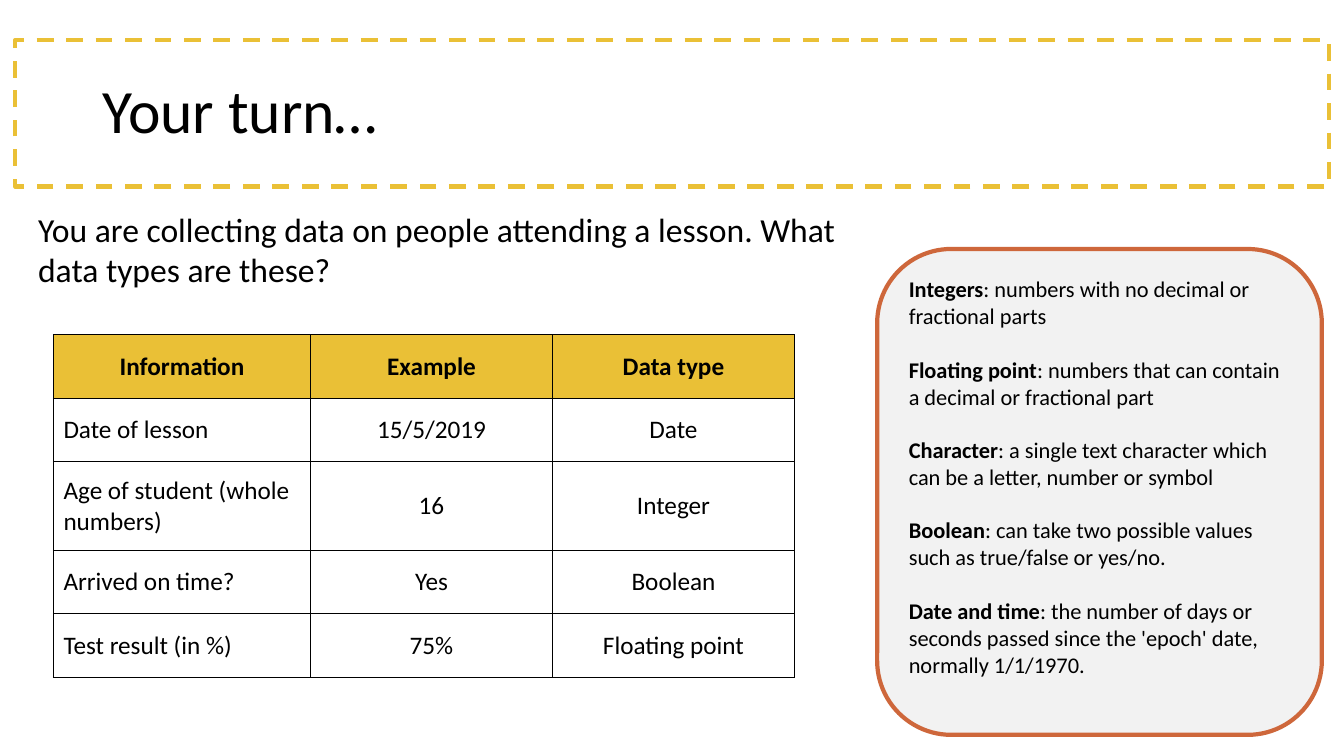
from pptx import Presentation
from pptx.dml.color import RGBColor
from pptx.enum.dml import MSO_LINE
from pptx.enum.shapes import MSO_SHAPE as Preset
from pptx.enum.text import MSO_ANCHOR as Anchor, PP_ALIGN as Align
from pptx.oxml import parse_xml
from pptx.oxml.ns import nsdecls
from pptx.util import Inches, Pt

TITLE = "Your turn…"
QUESTION = "You are collecting data on people attending a lesson. What data types are these?"
DEFINITIONS = [
    ("Integers", "numbers with no decimal or fractional parts"),
    ("Floating point", "numbers that can contain a decimal or fractional part"),
    ("Character", "a single text character which can be a letter, number or symbol"),
    ("Boolean", "can take two possible values such as true/false or yes/no."),
    ("Date and time", "the number of days or seconds passed since the 'epoch' date, normally 1/1/1970."),
]
ROWS = [
    ("Information", "Example", "Data type"),
    ("Date of lesson", "15/5/2019", "Date"),
    ("Age of student (whole numbers)", "16", "Integer"),
    ("Arrived on time?", "Yes", "Boolean"),
    ("Test result (in %)", "75%", "Floating point"),
]
COLUMN_WIDTHS = [2.55, 2.4, 2.4]
ROW_HEIGHTS = [0.63, 0.63, 0.88, 0.63, 0.63]

BOXES = {
    "banner": (0.15, 0.4, 13.03, 1.45),
    "title": (0.92, 0.4, 11.5, 1.45),
    "panel": (8.7, 2.47, 4.41, 4.82),
    "question": (0.28, 2.02, 8.43, 0.91),
    "table": (0.53, 3.32, sum(COLUMN_WIDTHS), sum(ROW_HEIGHTS)),
}
THEME = {
    "font": "Calibri",
    "text": "000000",
    "yellow": "EAC036",
    "orange": "CE673B",
    "panel": "F2F2F2",
    "title_size": 44,
    "question_size": 24,
    "table_size": 18,
    "panel_size": 16,
}


def color(name):
    return RGBColor.from_string(THEME[name])


def box(name):
    return [Inches(length) for length in BOXES[name]]


def add_run(paragraph, text, size, bold=False):
    run = paragraph.add_run()
    run.text = text
    values = {"name": THEME["font"], "size": Pt(THEME[size]), "bold": bold}
    for attribute, value in values.items():
        setattr(run.font, attribute, value)
    run.font.color.rgb = color("text")


def add_outlined(slide, preset, name, line):
    shape = slide.shapes.add_shape(preset, *box(name))
    shape.shadow.inherit = False
    shape.fill.background()
    shape.line.color.rgb = color(line)
    shape.line.width = Pt(3)
    return shape


def add_text(slide, name, text, anchor):
    frame = slide.shapes.add_textbox(*box(name)).text_frame
    for attribute, value in {"word_wrap": True, "vertical_anchor": anchor}.items():
        setattr(frame, attribute, value)
    add_run(frame.paragraphs[0], text, f"{name}_size")
    return frame.paragraphs[0]


def add_borders(cell):
    properties = cell._tc.get_or_add_tcPr()
    for index, side in enumerate(("lnL", "lnR", "lnT", "lnB")):
        properties.insert(index, parse_xml(
            f'<a:{side} {nsdecls("a")} w="12700"><a:solidFill>'
            f'<a:srgbClr val="{THEME["text"]}"/></a:solidFill></a:{side}>'))


def add_definitions(slide):
    panel = add_outlined(slide, Preset.ROUNDED_RECTANGLE, "panel", "orange")
    panel.fill.solid()
    panel.fill.fore_color.rgb = color("panel")
    frame = panel.text_frame
    frame.word_wrap = True
    frame.vertical_anchor = Anchor.TOP
    for index, (term, meaning) in enumerate(DEFINITIONS):
        paragraph = frame.add_paragraph() if index else frame.paragraphs[0]
        paragraph.alignment = Align.LEFT
        if index:
            paragraph.space_before = Pt(19)
        add_run(paragraph, term, "panel_size", True)
        add_run(paragraph, f": {meaning}", "panel_size")


def add_data_types(slide):
    table = slide.shapes.add_table(len(ROWS), len(COLUMN_WIDTHS), *box("table")).table
    for column, width in zip(table.columns, COLUMN_WIDTHS):
        column.width = Inches(width)
    for row, height in zip(table.rows, ROW_HEIGHTS):
        row.height = Inches(height)
    for row_index, texts in enumerate(ROWS):
        header = row_index == 0
        for column_index, text in enumerate(texts):
            cell = table.cell(row_index, column_index)
            cell.vertical_anchor = Anchor.MIDDLE
            if header:
                cell.fill.solid()
                cell.fill.fore_color.rgb = color("yellow")
            else:
                cell.fill.background()
            paragraph = cell.text_frame.paragraphs[0]
            paragraph.alignment = Align.CENTER if header or column_index else Align.LEFT
            add_run(paragraph, text, "table_size", header)
            add_borders(cell)


def main():
    presentation = Presentation()
    presentation.slide_width = Inches(13.33)
    presentation.slide_height = Inches(7.5)
    slide = presentation.slides.add_slide(presentation.slide_layouts[6])
    banner = add_outlined(slide, Preset.RECTANGLE, "banner", "yellow")
    banner.line.dash_style = MSO_LINE.DASH
    add_text(slide, "title", TITLE, Anchor.MIDDLE).line_spacing = 0.9
    add_definitions(slide)
    add_text(slide, "question", QUESTION, Anchor.TOP)
    add_data_types(slide)
    presentation.save("out.pptx")


if __name__ == "__main__":
    main()
